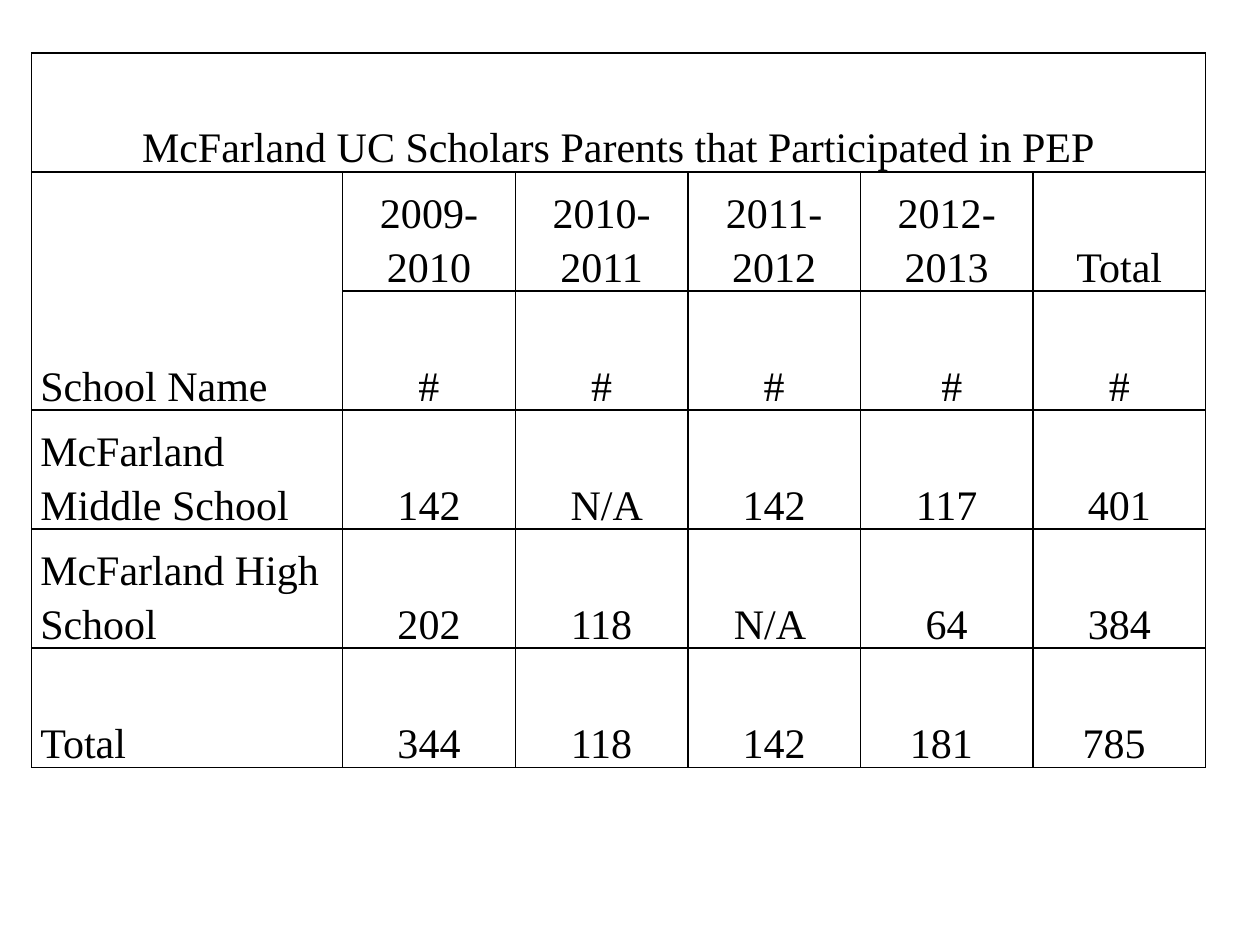
"""Build a slide with a table of parent participation by school and year."""
from lxml.etree import SubElement
from pptx import Presentation
from pptx.dml.color import RGBColor
from pptx.enum.text import MSO_ANCHOR, PP_ALIGN
from pptx.oxml import parse_xml
from pptx.oxml.ns import nsdecls
from pptx.util import Inches, Pt


def rgb(color):
    return RGBColor.from_string(color)


def add_borders(cell, color, width):
    tcPr = cell._tc.get_or_add_tcPr()
    for i, side in enumerate(("lnL", "lnR", "lnT", "lnB")):
        ln = parse_xml(
            f'<a:{side} {nsdecls("a")} w="{Pt(width)}"><a:solidFill>'
            f'<a:srgbClr val="{color}"/></a:solidFill></a:{side}>'
        )
        tcPr.insert(i, ln)


rows = [
    ["McFarland UC Scholars Parents that Participated in PEP", "", "", "", "", ""],
    ["School Name", "2009-2010", "2010-2011", "2011-2012", "2012-2013", "Total"],
    ["", "#", "#", "#", " #", "#"],
    ["McFarland Middle School", "142", " N/A", "142", "117", "401"],
    ["McFarland High School", "202", "118", "N/A ", "64", "384"],
    ["Total", "344", "118", "142", "181 ", "785 "],
]
col_widths = [2.47] + [1.37] * 5

prs = Presentation()
prs.slide_width = Inches(10)
prs.slide_height = Inches(7.5)
s = prs.slides.add_slide(prs.slide_layouts[6])

table = s.shapes.add_table(
    len(rows), len(col_widths), Inches(0.25), Inches(0.42), Inches(9.33), Inches(5.67)
).table
table.first_row = False
table.horz_banding = False
for col, width in zip(table.columns, col_widths):
    col.width = Inches(width)

for i, row in enumerate(rows):
    for j, text in enumerate(row):
        cell = table.cell(i, j)
        cell.fill.background()
        add_borders(cell, "000000", 1)
        cell.vertical_anchor = MSO_ANCHOR.BOTTOM
        cell.margin_left = cell.margin_right = Inches(0.07)
        cell.margin_top = cell.margin_bottom = 0
        if not text:
            continue
        p = cell.text_frame.paragraphs[0]
        p.alignment = PP_ALIGN.LEFT if j == 0 and i > 0 else PP_ALIGN.CENTER
        p.line_spacing = 1.15
        r = p.add_run()
        r.text = text
        r.font.size = Pt(24)
        r.font.name = "Times New Roman"
        r.font.color.rgb = rgb("000000")

table.cell(0, 0).merge(table.cell(0, 5))
table.cell(1, 0).merge(table.cell(2, 0))

prs.save("out.pptx")
